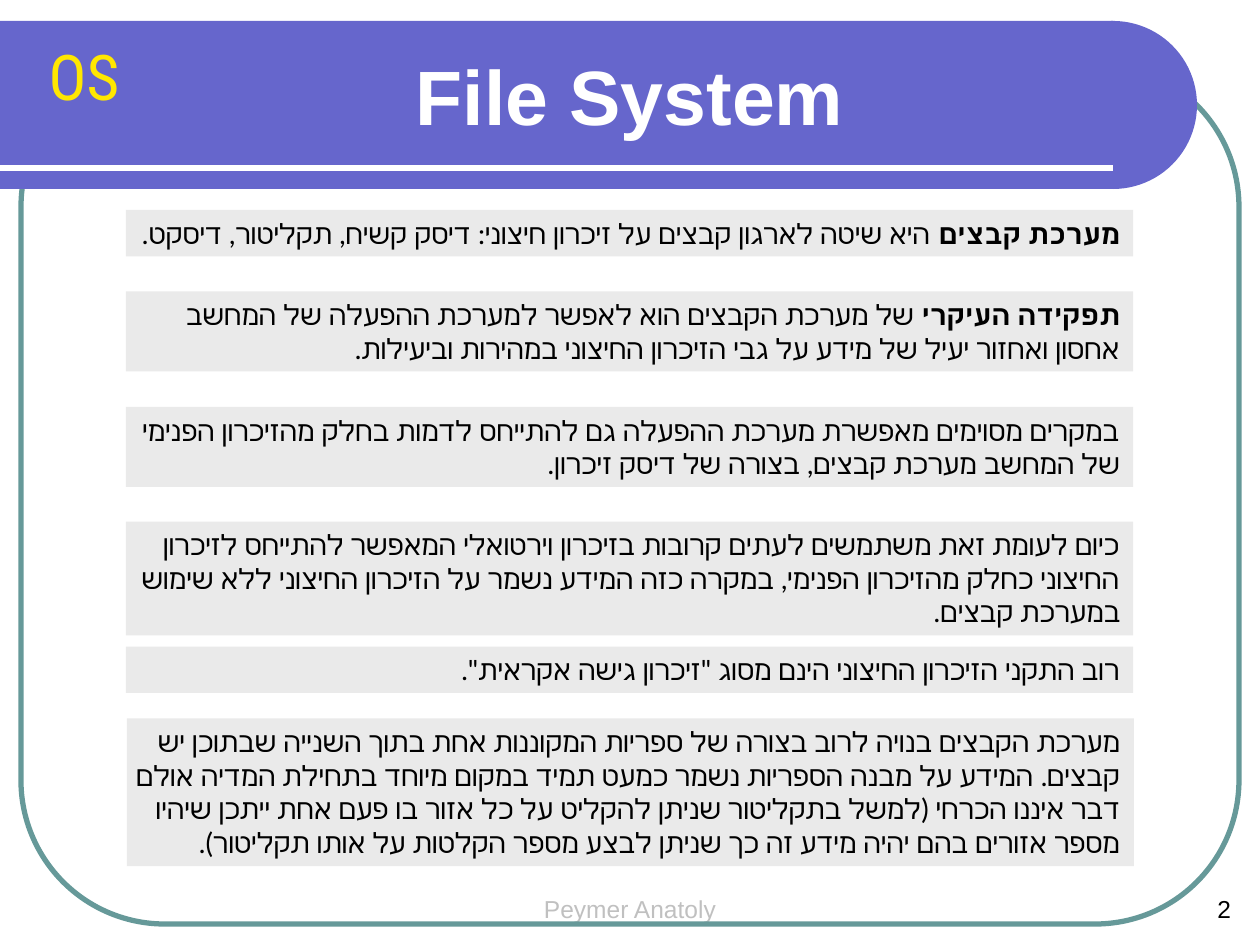
from pptx import Presentation
from pptx.dml.color import RGBColor
from pptx.enum.shapes import MSO_CONNECTOR, MSO_SHAPE as SHAPE
from pptx.enum.text import MSO_ANCHOR as ANCHOR, MSO_AUTO_SIZE as AUTO, PP_ALIGN as ALIGN
from pptx.oxml.ns import qn
from pptx.util import Pt
from lxml.etree import SubElement

COLORS = {
    "banner": "6666CC", "frame": "669999", "note": "EAEAEA", "white": "FFFFFF",
    "black": "000000", "footer": "C0C0C0", "yellow": "FFE701", "orange": "FE3E02",
}
BODY = {"name": "Lato", "size": Pt(16)}
SMALL = {"name": "Arial", "size": Pt(14)}
TITLE = {"name": "Arial", "size": Pt(44), "bold": True}
BADGE = {"name": "Roboto Condensed", "size": Pt(36)}
NOTES = [
    (72, 120, 1, "מערכת קבצים", " היא שיטה לארגון קבצים על זיכרון חיצוני: דיסק קשיח, תקליטור, דיסקט."),
    (72, 166.5, 2, "תפקידה העיקרי ", "של מערכת הקבצים הוא לאפשר למערכת ההפעלה של המחשב "
     "אחסון ואחזור יעיל של מידע על גבי הזיכרון החיצוני במהירות וביעילות."),
    (72, 232.5, 2, "", "במקרים מסוימים מאפשרת מערכת ההפעלה גם להתייחס לדמות בחלק מהזיכרון הפנימי "
     "של המחשב מערכת קבצים, בצורה של דיסק זיכרון."),
    (72, 298, 3, "", "כיום לעומת זאת משתמשים לעתים קרובות בזיכרון וירטואלי המאפשר להתייחס לזיכרון "
     "החיצוני כחלק מהזיכרון הפנימי, במקרה כזה המידע נשמר על הזיכרון החיצוני ללא שימוש "
     "במערכת קבצים."),
    (72, 369.5, 1, "", "רוב התקני הזיכרון החיצוני הינם מסוג \"זיכרון גישה אקראית\"."),
    (72.5, 410.5, 4, "", "מערכת הקבצים בנויה לרוב בצורה של ספריות המקוננות אחת בתוך השנייה שבתוכן יש "
     "קבצים. המידע על מבנה הספריות נשמר כמעט תמיד במקום מיוחד בתחילת המדיה אולם "
     "דבר איננו הכרחי (למשל בתקליטור שניתן להקליט על כל אזור בו פעם אחת ייתכן שיהיו "
     "מספר אזורים בהם יהיה מידע זה כך שניתן לבצע מספר הקלטות על אותו תקליטור)."),
]


def rgb(key):
    """Return the named colour."""
    return RGBColor.from_string(COLORS[key])


def box(*lengths):
    """Convert point values to lengths."""
    return [Pt(v) for v in lengths]


def add_run(p, text, font, color="black"):
    """Add a formatted run, with the same font for complex scripts."""
    r = p.add_run()
    r.text = text
    for name, value in font.items():
        setattr(r.font, name, value)
    r.font.color.rgb = rgb(color)
    SubElement(r.font._element, qn("a:cs"), typeface=font["name"])
    return r


def set_rtl(p):
    """Make a paragraph run from right to left."""
    p._p.get_or_add_pPr().set("rtl", "1")


def add_shape(s, kind, bounds, fill=None, line=None):
    """Add a flat preset shape with an optional fill and outline."""
    sp = s.shapes.add_shape(kind, *box(*bounds))
    sp.shadow.inherit = False
    if fill:
        sp.fill.solid()
        sp.fill.fore_color.rgb = rgb(fill)
    else:
        sp.fill.background()
    if line:
        sp.line.color.rgb = rgb(line)
        sp.line.width = Pt(3)
    else:
        sp.line.fill.background()
    return sp


def add_text(s, bounds, text, font, color, align, wrap=False, rtl=False, anchor=ANCHOR.TOP):
    """Add a one-line text box and return its run."""
    tf = s.shapes.add_textbox(*box(*bounds)).text_frame
    tf.word_wrap = wrap
    tf.vertical_anchor = anchor
    p = tf.paragraphs[0]
    p.alignment = align
    if rtl:
        set_rtl(p)
    return add_run(p, text, font, color)


def add_rule(s, x1, y1, x2, y2):
    """Add the white line across the banner."""
    line = s.shapes.add_connector(MSO_CONNECTOR.STRAIGHT, *box(x1, y1, x2, y2))
    line.line.color.rgb = rgb("white")
    line.line.width = Pt(3)
    SubElement(line._element.spPr, qn("a:effectLst"))


def add_note(s, left, top, lines, lead, text):
    """Add a grey Hebrew note as tall as its lines, with an optional bold lead."""
    sp = add_shape(s, SHAPE.RECTANGLE, (left, top, 575.5, 7.2 + 19.3 * lines), fill="note")
    tf = sp.text_frame
    tf.word_wrap = True
    tf.auto_size = AUTO.SHAPE_TO_FIT_TEXT
    tf.vertical_anchor = ANCHOR.TOP
    tf.margin_left = Pt(3)
    p = tf.paragraphs[0]
    p.alignment = ALIGN.RIGHT
    set_rtl(p)
    if lead:
        add_run(p, lead, {**BODY, "bold": True})
    add_run(p, text, BODY)


def add_badge(s):
    """Add the course badge with its gradient lettering."""
    r = add_text(s, (12, 18, 72, 66), "OS", BADGE, "yellow", ALIGN.CENTER)
    fill = r.font.fill
    fill.gradient()
    fill.gradient_angle = 270
    for stop, key in zip(fill.gradient_stops, ("yellow", "orange")):
        stop.color.rgb = rgb(key)


def main():
    """Build the slide and save it."""
    prs = Presentation()
    prs.slide_width, prs.slide_height = box(720, 540)
    s = prs.slides.add_slide(prs.slide_layouts[6])
    add_text(s, (300, 507.5, 120, 22), "Peymer Anatoly", SMALL, "footer", ALIGN.CENTER, rtl=True)
    add_text(s, (662.5, 507.5, 48, 24), "2", SMALL, "black", ALIGN.RIGHT, wrap=True, rtl=True)
    frame = add_shape(s, SHAPE.ROUNDED_RECTANGLE, (12, 36, 696, 492), line="frame")
    frame.adjustments[0] = 0.167
    add_shape(s, SHAPE.RECTANGLE, (0, 12, 636, 96), fill="banner")
    add_shape(s, SHAPE.OVAL, (588, 12, 96, 96), fill="banner")
    add_rule(s, 0, 96, 636, 96)
    add_badge(s)
    for note in NOTES:
        add_note(s, *note)
    add_text(s, (196.5, 18, 327, 72), "File System", TITLE, "white", ALIGN.CENTER,
             anchor=ANCHOR.MIDDLE)
    prs.save("out.pptx")


if __name__ == "__main__":
    main()
